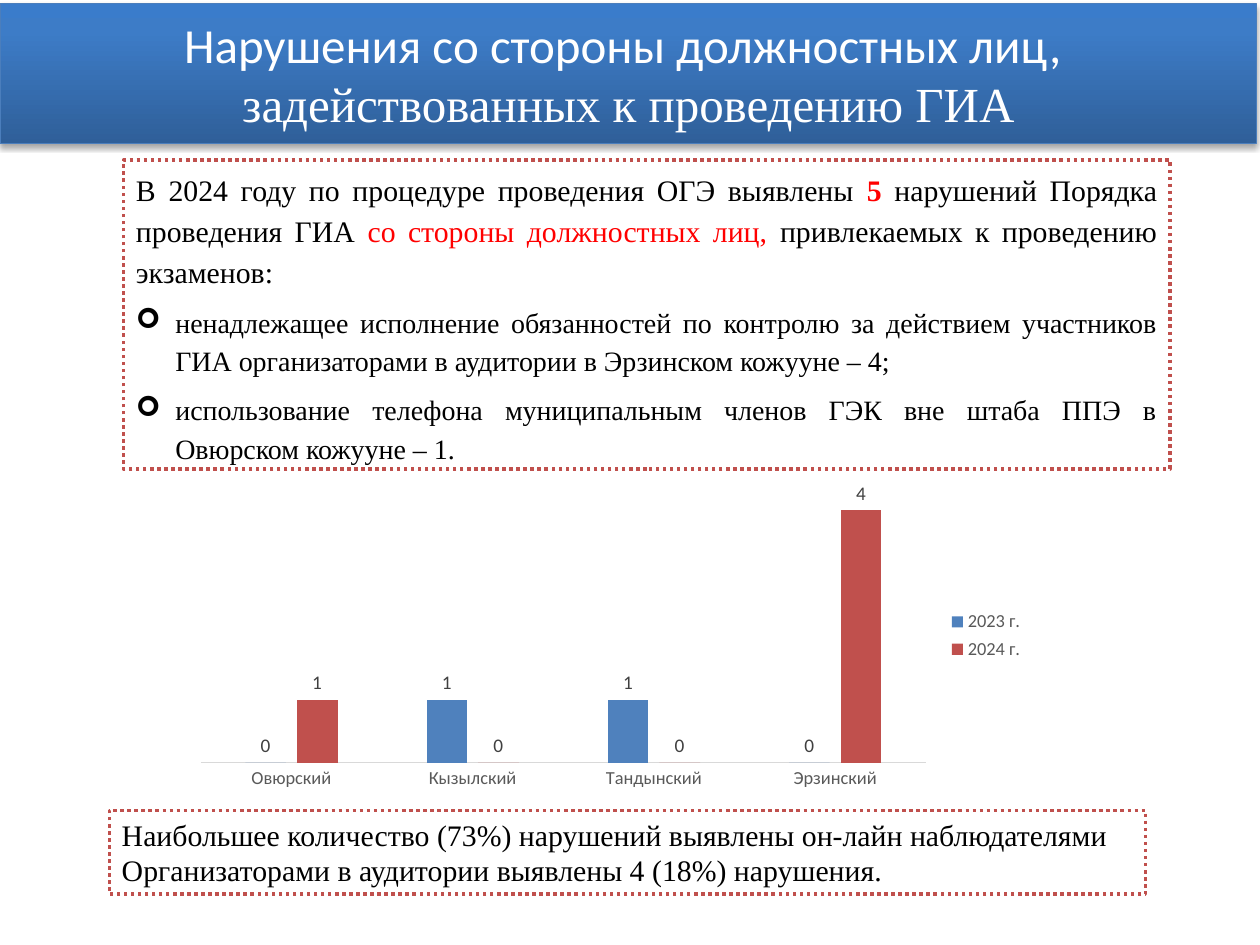
from copy import deepcopy

from lxml.etree import SubElement
from pptx import Presentation
from pptx.chart.data import CategoryChartData
from pptx.dml.color import RGBColor
from pptx.enum.chart import XL_CHART_TYPE as ChartType, XL_LABEL_POSITION as LabelPos
from pptx.enum.chart import XL_LEGEND_POSITION as LegendPos, XL_TICK_MARK as Tick
from pptx.enum.dml import MSO_LINE_DASH_STYLE as Dash
from pptx.enum.shapes import MSO_SHAPE as Preset
from pptx.enum.text import MSO_ANCHOR as Anchor, MSO_AUTO_SIZE as AutoSize, PP_ALIGN as Align
from pptx.oxml import parse_xml
from pptx.oxml.ns import nsdecls, qn
from pptx.util import Pt

COLORS = {
    "white": "FFFFFF", "black": "000000", "alert": "FF0000",
    "border": "C0504D", "banner_line": "4B7EBC",
    "banner_low": "2F5F99", "banner_mid": "3D7CC7", "banner_top": "3A7CCB",
    "year_2023": "4F81BD", "year_2024": "C0504D",
    "axis_text": "595959", "label_text": "404040", "axis_line": "D9D9D9",
}
SERIF, SANS = "Times New Roman", "Calibri"
DISTRICTS = ["Овюрский", "Кызылский", "Тандынский", "Эрзинский"]
VIOLATIONS = [
    ("2023 г.", (0, 1, 1, 0), "year_2023"),
    ("2024 г.", (1, 0, 0, 4), "year_2024"),
]
INTRO = [
    ("В 2024 году по процедуре проведения ОГЭ выявлены ", {}),
    ("5 ", {"color": "alert", "bold": True}),
    ("нарушений Порядка проведения ГИА ", {}),
    ("со стороны должностных лиц, ", {"color": "alert"}),
    ("привлекаемых к проведению экзаменов:", {}),
]
FINDINGS = [
    "ненадлежащее исполнение обязанностей по контролю за действием участников "
    "ГИА организаторами в аудитории в Эрзинском кожууне – 4;",
    "использование телефона муниципальным членов ГЭК вне штаба ППЭ в "
    "Овюрском кожууне – 1.",
]
SUMMARY = [
    "Наибольшее количество (73%) нарушений выявлены он-лайн наблюдателями",
    "Организаторами в аудитории выявлены 4 (18%) нарушения.",
]


def rgb(name):
    return RGBColor.from_string(COLORS[name])


def set_font(font, size, color, face, bold=False):
    font.size, font.name, font.bold = Pt(size), face, bold
    font.color.rgb = rgb(color)


def add_text(paragraph, text, size=17, color="black", face=SERIF, bold=False):
    run = paragraph.add_run()
    run.text = text
    set_font(run.font, size, color, face, bold)


def add_paragraph(frame, align, spacing=1.0, before=0):
    first = frame.paragraphs[0]
    paragraph = first if not first.runs else frame.add_paragraph()
    paragraph.alignment, paragraph.line_spacing = align, spacing
    paragraph.space_before = Pt(before)
    return paragraph


def set_bullet(paragraph, mark=None, indent=0):
    props = paragraph._p.get_or_add_pPr()
    props.set("marL", str(Pt(indent)))
    props.set("indent", str(-Pt(indent)))
    if mark:
        SubElement(props, qn("a:buFont"), typeface="Wingdings")
        SubElement(props, qn("a:buChar"), char=mark)
    else:
        SubElement(props, qn("a:buNone"))


def place(shape, left, top, width, height):
    shape.left, shape.top, shape.width, shape.height = map(Pt, (left, top, width, height))


def frame_box(shape):
    shape.shadow.inherit = False
    shape.fill.solid()
    shape.fill.fore_color.rgb = rgb("white")
    shape.line.color.rgb = rgb("border")
    shape.line.width = Pt(2)
    shape.line.dash_style = Dash.ROUND_DOT
    frame = shape.text_frame
    frame.word_wrap = True
    frame.auto_size = AutoSize.SHAPE_TO_FIT_TEXT
    frame.vertical_anchor = Anchor.TOP
    return frame


def fill_banner(banner):
    banner.fill.gradient()
    banner.fill.gradient_angle = 90
    stop_list = banner._element.spPr.find(qn("a:gradFill")).find(qn("a:gsLst"))
    stop_list.append(deepcopy(stop_list[-1]))
    shades = ((0, "banner_low"), (0.8, "banner_mid"), (1, "banner_top"))
    for stop, (position, shade) in zip(banner.fill.gradient_stops, shades):
        stop.position = position
        stop.color.rgb = rgb(shade)
    banner.line.color.rgb = rgb("banner_line")
    banner.line.width = Pt(0.75)
    banner.shadow.inherit = False
    effects = banner._element.spPr.find(qn("a:effectLst"))
    shadow = SubElement(effects, qn("a:outerShdw"), blurRad=str(Pt(3.1)),
                        dist=str(Pt(1.8)), dir="5400000", rotWithShape="0")
    tint = SubElement(shadow, qn("a:srgbClr"), val=COLORS["black"])
    SubElement(tint, qn("a:alpha"), val="35000")


def add_title(slide):
    banner = slide.shapes.title
    place(banner, 0, 2, 718, 80)
    fill_banner(banner)
    frame = banner.text_frame
    frame.auto_size = AutoSize.NONE
    frame.word_wrap = False
    frame.vertical_anchor = Anchor.MIDDLE
    lines = (("Нарушения со стороны должностных лиц, ", SANS),
             ("задействованных к проведению ГИА", SERIF))
    for text, face in lines:
        add_text(add_paragraph(frame, Align.CENTER), text, size=28, color="white", face=face)


def add_findings(slide):
    body = slide.placeholders[1]
    place(body, 70.5, 91.5, 598, 183.5)
    frame = frame_box(body)
    intro = add_paragraph(frame, Align.JUSTIFY, 1.15, 6)
    set_bullet(intro)
    for text, style in INTRO:
        add_text(intro, text, **style)
    for finding in FINDINGS:
        item = add_paragraph(frame, Align.JUSTIFY, 1.15, 6)
        set_bullet(item, "➢", 22.5)
        add_text(item, finding, size=16)


def add_summary(slide):
    box = slide.shapes.add_shape(Preset.RECTANGLE, Pt(62.5), Pt(463), Pt(592), Pt(48))
    frame = frame_box(box)
    for line in SUMMARY:
        add_text(add_paragraph(frame, Align.JUSTIFY), line)


def set_plot_area(chart, **fractions):
    space = chart._chartSpace
    plot_area = space.chart.plotArea
    for old in plot_area.findall(qn("c:layout")):
        plot_area.remove(old)
    parts = [("layoutTarget", "inner"), ("xMode", "edge"), ("yMode", "edge"),
             *fractions.items()]
    values = "".join(f'<c:{tag} val="{value}"/>' for tag, value in parts)
    plot_area.insert(0, parse_xml(
        f'<c:layout {nsdecls("c")}><c:manualLayout>{values}</c:manualLayout></c:layout>'))
    space.find(qn("c:txPr")).addprevious(parse_xml(
        f'<c:spPr {nsdecls("c", "a")}><a:noFill/><a:ln><a:noFill/></a:ln></c:spPr>'))


def add_violations_chart(slide):
    data = CategoryChartData(number_format="0")
    data.categories = DISTRICTS
    for year, counts, _ in VIOLATIONS:
        data.add_series(year, counts)
    chart = slide.shapes.add_chart(ChartType.COLUMN_CLUSTERED, Pt(105), Pt(270),
                                   Pt(487.5), Pt(186.5), data).chart
    set_font(chart.font, 10, "black", SANS)
    chart.has_title = False
    chart.has_legend = True
    chart.legend.position = LegendPos.RIGHT
    chart.legend.include_in_layout = False
    set_font(chart.legend.font, 10.5, "axis_text", SANS)

    districts, counts_axis = chart.category_axis, chart.value_axis
    districts.major_tick_mark = districts.minor_tick_mark = Tick.NONE
    districts.format.line.color.rgb = rgb("axis_line")
    districts.format.line.width = Pt(0.75)
    set_font(districts.tick_labels.font, 10.5, "axis_text", SANS)
    counts_axis.visible = counts_axis.has_major_gridlines = False
    counts_axis.minimum_scale, counts_axis.maximum_scale = 0, 4.5

    plot = chart.plots[0]
    plot.gap_width, plot.overlap, plot.vary_by_categories = 219, -27, False
    for series, (_, _, color) in zip(plot.series, VIOLATIONS):
        series.format.fill.solid()
        series.format.fill.fore_color.rgb = rgb(color)
        labels = series.data_labels
        labels.show_value = True
        labels.position = LabelPos.OUTSIDE_END
        set_font(labels.font, 11, "label_text", SANS)
    set_plot_area(chart, x=0.02, y=0.02, w=0.85, h=0.87)


def main():
    deck = Presentation()
    deck.slide_width, deck.slide_height = Pt(720), Pt(540)
    slide = deck.slides.add_slide(deck.slide_layouts[1])
    add_title(slide)
    add_findings(slide)
    add_summary(slide)
    add_violations_chart(slide)
    deck.save("out.pptx")


if __name__ == "__main__":
    main()
